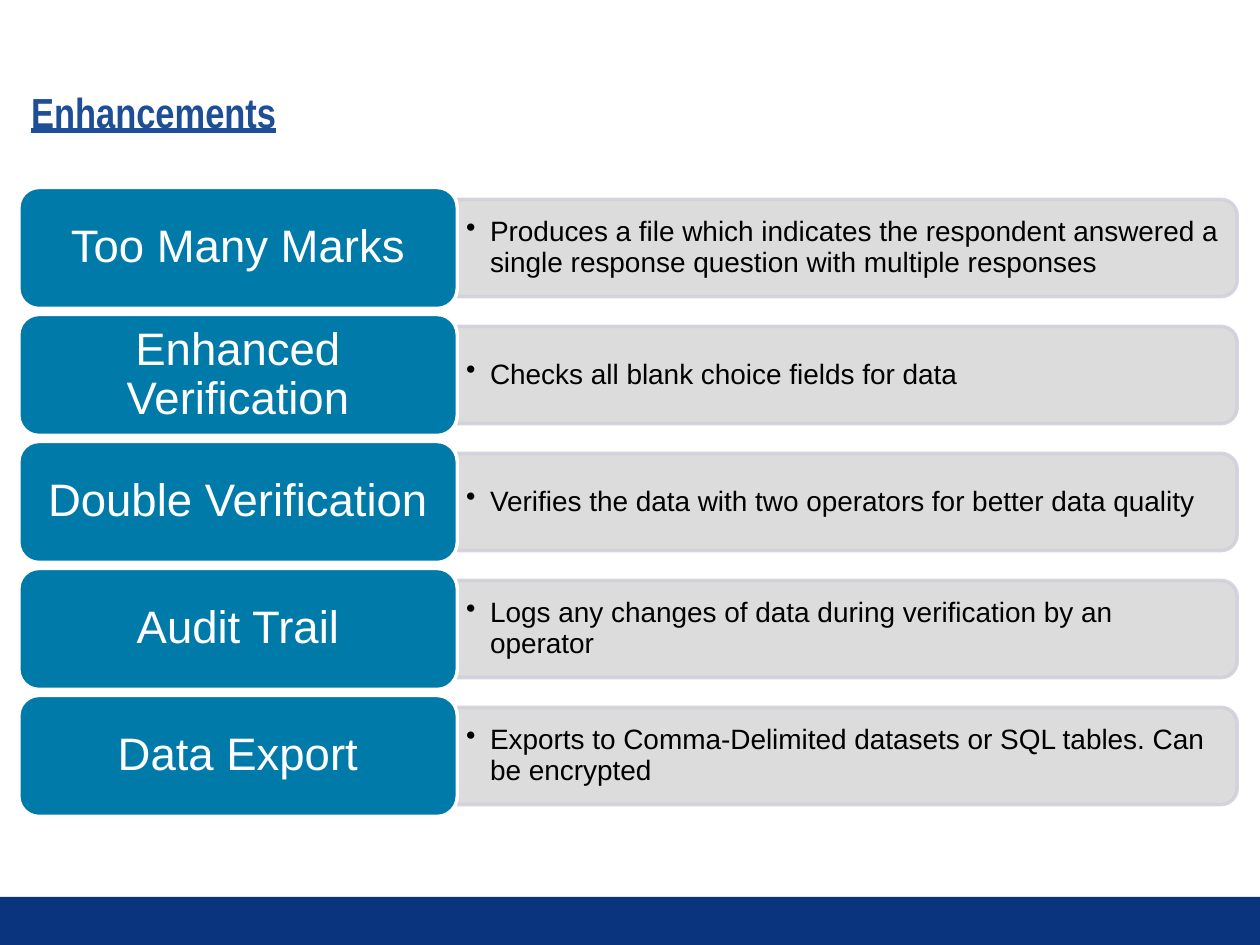
from lxml.etree import SubElement
from pptx import Presentation
from pptx.dml.color import RGBColor
from pptx.enum.shapes import MSO_SHAPE as Shape
from pptx.enum.text import MSO_ANCHOR as Anchor, PP_ALIGN as Align
from pptx.oxml.ns import qn
from pptx.util import Cm, Pt

TITLE = "Enhancements"
ENHANCEMENTS = [
    ("Too Many Marks", "Produces a file which indicates the respondent answered a "
                       "single response question with multiple responses"),
    ("Enhanced Verification", "Checks all blank choice fields for data"),
    ("Double Verification", "Verifies the data with two operators for better data quality"),
    ("Audit Trail", "Logs any changes of data during verification by an operator"),
    ("Data Export", "Exports to Comma-Delimited datasets or SQL tables. Can be encrypted"),
]

WHITE = RGBColor(0xFF, 0xFF, 0xFF)
BLACK = RGBColor(0x00, 0x00, 0x00)
NAVY = RGBColor(0x0A, 0x35, 0x7E)
TITLE_BLUE = RGBColor(0x1E, 0x4E, 0x96)
TEAL = RGBColor(0x00, 0x7A, 0xA8)
GRAY = RGBColor(0xD9, 0xD9, 0xD9)
LILAC = RGBColor(0xD4, 0xCF, 0xDB)

ROW_TOP, ROW_PITCH = 3.78, 2.56
LABEL_LEFT, LABEL_WIDTH, LABEL_HEIGHT = 0.38, 8.84, 2.44
BAR_LEFT = LABEL_LEFT + LABEL_WIDTH
BAR_WIDTH, BAR_HEIGHT = 15.72, 1.96
DETAIL_WIDTH, DETAIL_HEIGHT = 15.62, 1.75


def add_box(slide, kind, left, top, width, height, fill, line=None):
    shape = slide.shapes.add_shape(kind, Cm(left), Cm(top), Cm(width), Cm(height))
    shape.shadow.inherit = False
    shape.fill.solid()
    shape.fill.fore_color.rgb = fill
    if line is None:
        shape.line.fill.background()
    else:
        shape.line.color.rgb = line
        shape.line.width = Pt(2)
    return shape


def add_textbox(slide, left, top, width, height):
    return slide.shapes.add_textbox(Cm(left), Cm(top), Cm(width), Cm(height))


def set_text(shape, text, size, color, insets, font="Arial", align=Align.LEFT,
             bold=False, underline=False, bullet=False):
    frame = shape.text_frame
    frame.word_wrap = True
    frame.vertical_anchor = Anchor.MIDDLE
    frame.margin_left, frame.margin_top, frame.margin_right, frame.margin_bottom = map(Cm, insets)
    paragraph = frame.paragraphs[0]
    paragraph.alignment = align
    paragraph.line_spacing = 0.9
    if bullet:
        properties = paragraph._p.get_or_add_pPr()
        properties.set("marL", str(Cm(0.48)))
        properties.set("indent", str(-Cm(0.48)))
        SubElement(properties, qn("a:buChar"), char="•")
    run = paragraph.add_run()
    run.text = text
    run.font.name = font
    run.font.size = Pt(size)
    run.font.bold = bold
    run.font.underline = underline
    run.font.color.rgb = color


def make_translucent(shape, percent):
    for color in shape._element.spPr.iter(qn("a:srgbClr")):
        SubElement(color, qn("a:alpha"), val=str(percent * 1000))


def add_row(slide, top, label, detail):
    middle = top + LABEL_HEIGHT / 2
    bar = add_box(slide, Shape.ROUND_2_SAME_RECTANGLE,
                  BAR_LEFT + (BAR_WIDTH - BAR_HEIGHT) / 2, middle - BAR_WIDTH / 2,
                  BAR_HEIGHT, BAR_WIDTH, GRAY, LILAC)
    bar.rotation = 90
    make_translucent(bar, 90)
    detail_box = add_textbox(slide, BAR_LEFT, middle - DETAIL_HEIGHT / 2,
                             DETAIL_WIDTH, DETAIL_HEIGHT)
    set_text(detail_box, detail, 16, BLACK, (0.18, 0.08, 0.18, 0.08), bullet=True)
    label_box = add_box(slide, Shape.ROUNDED_RECTANGLE, LABEL_LEFT, top,
                        LABEL_WIDTH, LABEL_HEIGHT, TEAL, WHITE)
    set_text(label_box, label, 26, WHITE, (0.4, 0.25, 0.4, 0.25), align=Align.CENTER)


def main():
    presentation = Presentation()
    presentation.slide_width, presentation.slide_height = Cm(25.4), Cm(19.05)
    slide = presentation.slides.add_slide(presentation.slide_layouts[6])
    add_box(slide, Shape.RECTANGLE, 0, 18.08, 25.4, 0.97, NAVY)
    title = add_textbox(slide, 0.38, 0.51, 24.56, 3.6)
    set_text(title, TITLE, 24, TITLE_BLUE, (0.25, 0.25, 0.5, 0.25),
             font="Arial Narrow", bold=True, underline=True)
    for index, (label, detail) in enumerate(ENHANCEMENTS):
        add_row(slide, ROW_TOP + index * ROW_PITCH, label, detail)
    presentation.save("out.pptx")


if __name__ == "__main__":
    main()
